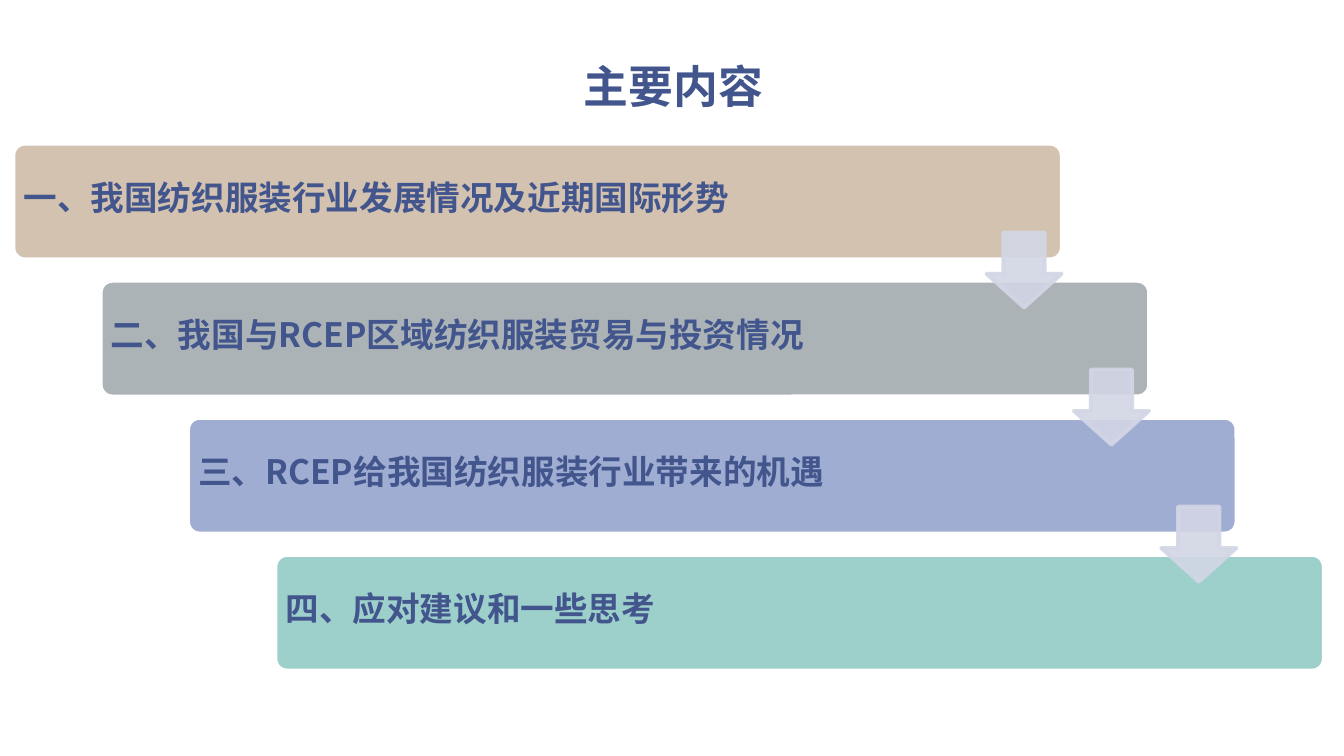
"""Build the agenda slide: four stepped topic bars joined by down arrows."""
from dataclasses import dataclass

from lxml.etree import SubElement
from pptx import Presentation
from pptx.dml.color import RGBColor
from pptx.enum.lang import MSO_LANGUAGE_ID as Lang
from pptx.enum.shapes import MSO_SHAPE as Preset
from pptx.enum.text import MSO_ANCHOR as Anchor, MSO_AUTO_SIZE as AutoSize, PP_ALIGN as Align
from pptx.oxml.ns import qn
from pptx.shapes.autoshape import Shape
from pptx.slide import Slide
from pptx.text.text import TextFrame
from pptx.util import Inches, Pt

FONT = "Noto Sans CJK SC"
INK = "42568D"
WHITE = "FFFFFF"
ARROW_COLOR = "D2D6E5"
SLIDE_WIDTH = 10
SLIDE_HEIGHT = SLIDE_WIDTH * 9 / 16
STEP_X, STEP_Y = 0.65, 1.02


@dataclass(frozen=True)
class Box:
    left: float
    top: float
    width: float
    height: float

    def stepped(self, index: int) -> "Box":
        return Box(self.left + index * STEP_X, self.top + index * STEP_Y, self.width, self.height)

    def lengths(self) -> tuple[Inches, ...]:
        return tuple(Inches(v) for v in (self.left, self.top, self.width, self.height))


@dataclass(frozen=True)
class Topic:
    text: str
    fill: str


TITLE_BOX = Box(0.31, 0.18, 9.4, 0.89)
FIRST_BAR = Box(0.1, 1.07, 7.8, 0.86)
FIRST_ARROW = Box(7.34, 1.73, 0.56, 0.56)
TOPICS = (
    Topic("一、我国纺织服装行业发展情况及近期国际形势", "D4C2B0"),
    Topic("二、我国与RCEP区域纺织服装贸易与投资情况", "ACB3B6"),
    Topic("三、RCEP给我国纺织服装行业带来的机遇", "A0ADD2"),
    Topic("四、应对建议和一些思考", "9DCFCB"),
)
FRAME_FORMAT = {"word_wrap": True, "auto_size": AutoSize.NONE, "vertical_anchor": Anchor.MIDDLE}
BAR_MARGINS = {
    "margin_left": Inches(0.05),
    "margin_right": Inches(0.05),
    "margin_top": Inches(0.05),
    "margin_bottom": Inches(0.05),
}
TITLE_PARAGRAPH = {"alignment": Align.CENTER, "line_spacing": Pt(30)}
BAR_PARAGRAPH = {"alignment": Align.LEFT, "line_spacing": Pt(16.8), "space_after": Pt(6.3)}


def color(value: str) -> RGBColor:
    return RGBColor.from_string(value)


def apply(target: object, values: dict[str, object]) -> None:
    for name, value in values.items():
        setattr(target, name, value)


def write_text(frame: TextFrame, text: str, size: float, paragraph_format: dict[str, object]) -> None:
    apply(frame, FRAME_FORMAT)
    paragraph = frame.paragraphs[0]
    apply(paragraph, paragraph_format)
    run = paragraph.add_run()
    run.text = text
    apply(run.font, {"name": FONT, "size": Pt(size), "bold": True,
                     "language_id": Lang.SIMPLIFIED_CHINESE})
    run.font.color.rgb = color(INK)
    SubElement(run.font._element, qn("a:ea"), typeface=FONT)


def draw_shape(slide: Slide, preset: Preset, box: Box, fill: str, line: str,
               adjustments: tuple[float, ...]) -> Shape:
    shape = slide.shapes.add_shape(preset, *box.lengths())
    shape.shadow.inherit = False
    for index, value in enumerate(adjustments):
        shape.adjustments[index] = value
    shape.fill.solid()
    shape.fill.fore_color.rgb = color(fill)
    shape.line.color.rgb = color(line)
    shape.line.width = Pt(2)
    return shape


def draw_title(slide: Slide, text: str) -> None:
    title = slide.shapes.title
    apply(title, dict(zip(("left", "top", "width", "height"), TITLE_BOX.lengths())))
    write_text(title.text_frame, text, 24, TITLE_PARAGRAPH)


def draw_bar(slide: Slide, topic: Topic, index: int) -> None:
    bar = draw_shape(slide, Preset.ROUNDED_RECTANGLE, FIRST_BAR.stepped(index),
                     topic.fill, WHITE, (0.1,))
    apply(bar.text_frame, BAR_MARGINS)
    write_text(bar.text_frame, topic.text, 18, BAR_PARAGRAPH)


def draw_arrow(slide: Slide, index: int) -> None:
    arrow = draw_shape(slide, Preset.DOWN_ARROW, FIRST_ARROW.stepped(index),
                       ARROW_COLOR, ARROW_COLOR, (0.55, 0.45))
    for tint in arrow._element.spPr.iter(qn("a:srgbClr")):
        SubElement(tint, qn("a:alpha"), val="90000")


def main() -> None:
    deck = Presentation()
    apply(deck, {"slide_width": Inches(SLIDE_WIDTH), "slide_height": Inches(SLIDE_HEIGHT)})
    slide = deck.slides.add_slide(deck.slide_layouts.get_by_name("Title Only"))
    draw_title(slide, "主要内容")
    for index, topic in enumerate(TOPICS):
        draw_bar(slide, topic, index)
    for index in range(len(TOPICS) - 1):
        draw_arrow(slide, index)
    deck.save("out.pptx")


if __name__ == "__main__":
    main()
